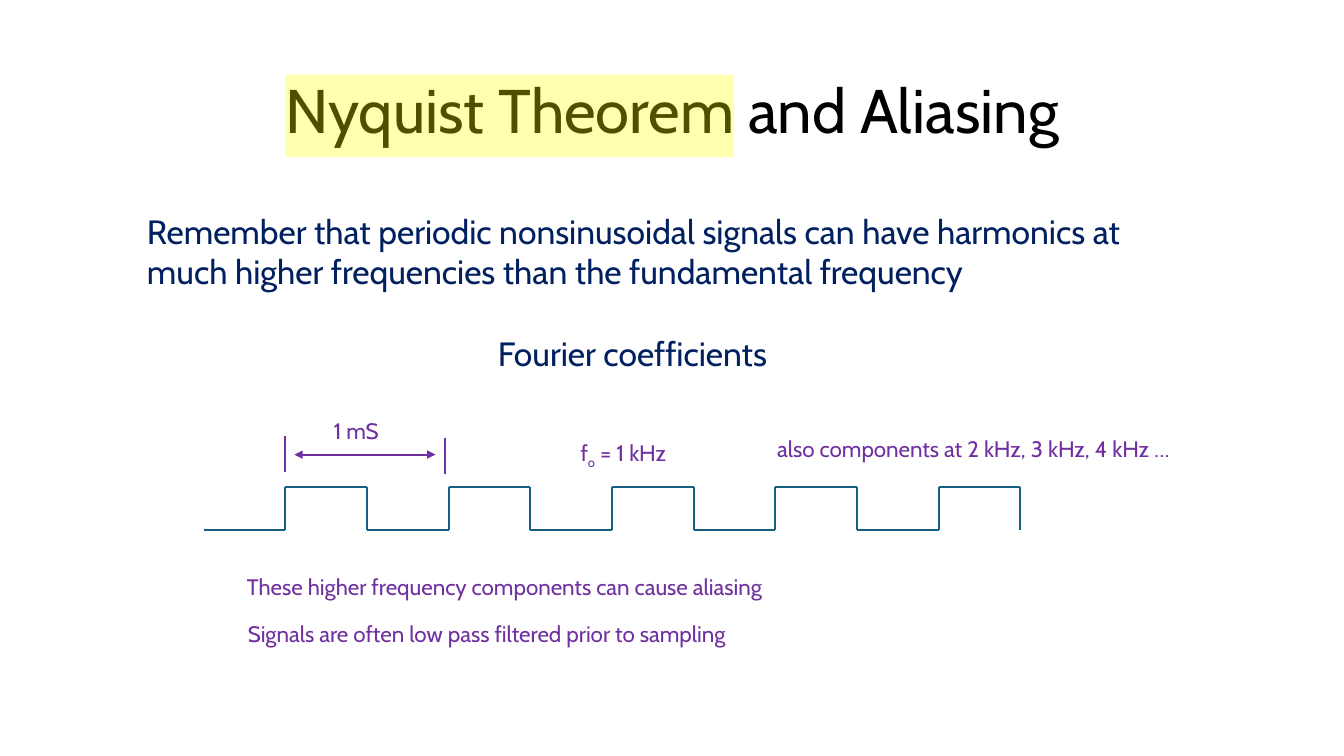
"""Build the slide on the Nyquist theorem, with a square wave and its period."""
from dataclasses import dataclass

from lxml.etree import SubElement
from pptx import Presentation
from pptx.dml.color import RGBColor as Color
from pptx.enum.shapes import MSO_CONNECTOR as Connector, MSO_SHAPE as Preset
from pptx.enum.text import MSO_ANCHOR as Anchor, PP_ALIGN as Align
from pptx.oxml.ns import qn
from pptx.util import Inches, Pt


@dataclass(frozen=True)
class Theme:
    font: str = "Cabin"
    title: Color = Color(0x00, 0x00, 0x00)
    body: Color = Color(0x00, 0x20, 0x60)
    note: Color = Color(0x70, 0x30, 0xA0)
    wave: Color = Color(0x15, 0x60, 0x82)
    highlight: Color = Color(0xFF, 0xFF, 0x00)
    title_size: int = 44
    body_size: int = 24
    note_size: int = 16
    line_width: float = 1.5


theme = Theme()


def add_text(slide, box, pieces, size, color):
    """Add a wrapped text box with one run per piece and return it."""
    shape = slide.shapes.add_textbox(*map(Inches, box))
    shape.text_frame.word_wrap = True
    paragraph = shape.text_frame.paragraphs[0]
    for piece in pieces:
        run = paragraph.add_run()
        run.text = piece
        run.font.name = theme.font
        run.font.size = Pt(size)
        run.font.color.rgb = color
    return shape


def add_line(group, start, end, color):
    """Add a straight line without shadow to a group and return it."""
    line = group.shapes.add_connector(Connector.STRAIGHT, *map(Inches, start + end))
    line.line.color.rgb = color
    line.line.width = Pt(theme.line_width)
    SubElement(line._element.spPr, qn("a:effectLst"))
    return line


presentation = Presentation()
presentation.slide_width = Inches(13.33)
presentation.slide_height = Inches(7.5)
slide = presentation.slides.add_slide(presentation.slide_layouts[6])

title = add_text(slide, (0.92, 0.4, 11.5, 1.45), ["Nyquist Theorem and Aliasing"],
                 theme.title_size, theme.title)
title.text_frame.vertical_anchor = Anchor.MIDDLE
title.text_frame.paragraphs[0].alignment = Align.CENTER
title.text_frame.paragraphs[0].line_spacing = 0.9

add_text(slide, (1.36, 2.04, 10.07, 0.91),
         ["Remember that periodic nonsinusoidal signals can have harmonics at "
          "much higher frequencies than the fundamental frequency"],
         theme.body_size, theme.body)

highlight = slide.shapes.add_shape(
    Preset.RECTANGLE, *map(Inches, (2.83, 0.74, 4.45, 0.82)))
highlight.shadow.inherit = False
highlight.fill.solid()
highlight.fill.fore_color.rgb = theme.highlight
highlight.line.fill.background()
highlight_color = highlight._element.spPr.find(qn("a:solidFill")).find(qn("a:srgbClr"))
SubElement(highlight_color, qn("a:alpha")).set("val", "31000")

add_text(slide, (4.84, 3.25, 3.04, 0.5), ["Fourier coefficients"],
         theme.body_size, theme.body)

wave = slide.shapes.add_group_shape()
wave_left, half_period, low, high = 2.02, 0.81, 5.26, 4.83
for step in range(10):
    left = wave_left + step * half_period
    right = left + half_period
    level = high if step % 2 else low
    add_line(wave, (left, level), (right, level), theme.wave)
    add_line(wave, (right, low), (right, high), theme.wave)

period = slide.shapes.add_group_shape()
for x, top in ((2.83, 4.33), (4.41, 4.35)):
    add_line(period, (x, top), (x, top + 0.35), theme.note)
arrow = add_line(period, (2.92, 4.51), (4.32, 4.51), theme.note)
for end in ("a:headEnd", "a:tailEnd"):
    SubElement(arrow.line._get_or_add_ln(), qn(end)).set("type", "triangle")

notes = (
    ((3.21, 4.09, 0.77, 0.37), ["1 mS"]),
    ((7.61, 4.27, 4.59, 0.37), ["also components at 2 kHz, 3 kHz, 4 kHz …"]),
    ((2.35, 5.64, 5.85, 0.37), ["These higher frequency components can cause aliasing"]),
    ((2.36, 6.1, 5.85, 0.37), ["Signals are often low pass filtered prior to sampling"]),
)
for box, pieces in notes:
    add_text(slide, box, pieces, theme.note_size, theme.note)

frequency = add_text(slide, (5.66, 4.31, 1.18, 0.37), ["f", "o", " = 1 kHz"],
                     theme.note_size, theme.note)
subscript = frequency.text_frame.paragraphs[0].runs[1]
subscript._r.get_or_add_rPr().set("baseline", "-25000")

presentation.save("out.pptx")
